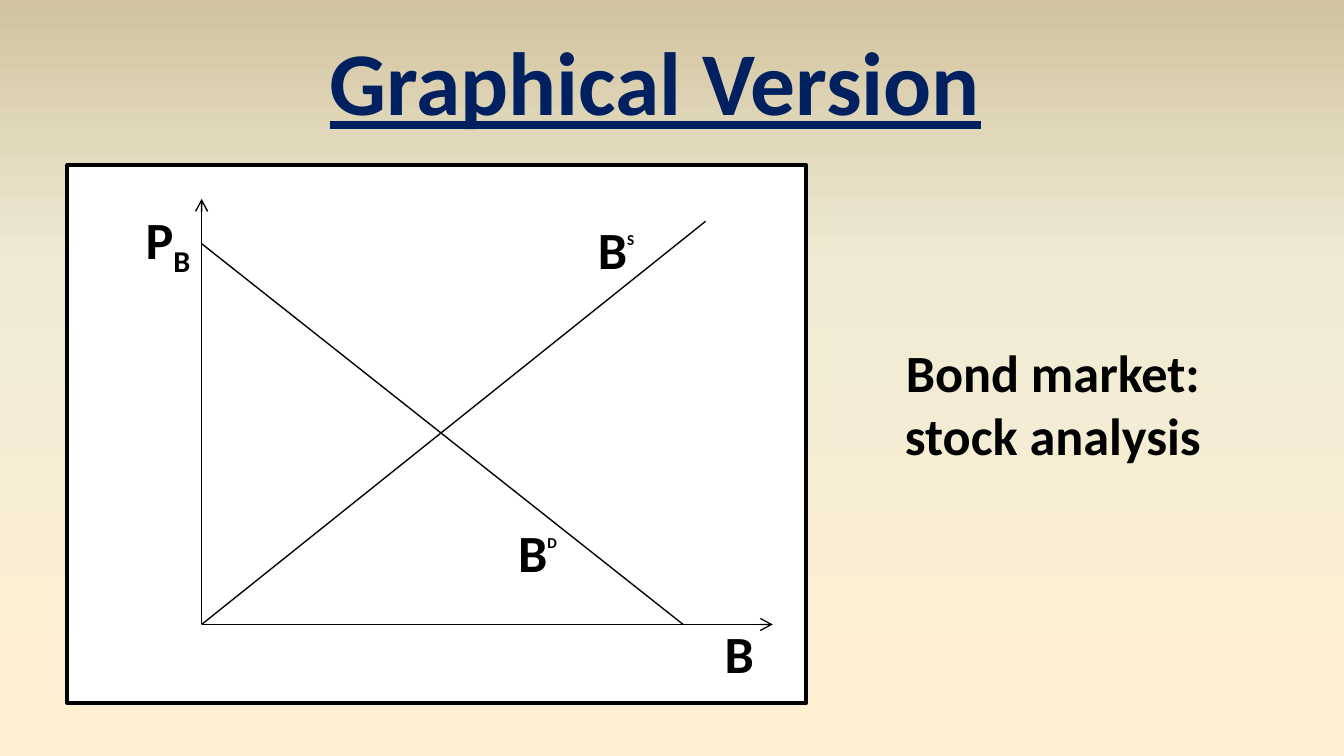
from copy import deepcopy
from dataclasses import dataclass

from pptx import Presentation
from pptx.dml.color import RGBColor
from pptx.enum.shapes import MSO_CONNECTOR, MSO_SHAPE
from pptx.enum.text import MSO_AUTO_SIZE, PP_ALIGN
from pptx.oxml.ns import qn
from pptx.oxml.xmlchemy import OxmlElement
from pptx.util import Inches, Pt


@dataclass(frozen=True)
class Theme:
    font: str = "Calibri"
    title_color: str = "002060"
    ink: str = "000000"
    panel: str = "FFFFFF"
    gradient: tuple = ((0, "FFEFD1"), (0.65, "F0EBD5"), (1, "D1C39F"))
    title_size: int = 48
    body_size: int = 28
    superscript_size: int = 14
    frame_width: float = 2
    line_width: float = 0.75


THEME = Theme()
SLIDE_WIDTH = 10
SLIDE_HEIGHT = SLIDE_WIDTH * 9 / 16
CELL = 1 / 12
GRID_TOP = 1.23
SUBSCRIPT, SUPERSCRIPT = -25, 90
ORIGIN = (18, 41)


def point(column, row):
    return Inches(column * CELL), Inches(GRID_TOP + row * CELL)


def area(column, row, columns, rows):
    return *point(column, row), Inches(columns * CELL), Inches(rows * CELL)


def paint_background(page):
    fill = page.background.fill
    fill.gradient()
    fill.gradient_angle = 90
    stop_list = page.element.find(".//" + qn("a:gsLst"))
    stop_list.append(deepcopy(stop_list[-1]))
    for stop, (position, color) in zip(fill.gradient_stops, THEME.gradient):
        stop.position = position
        stop.color.rgb = RGBColor.from_string(color)


def style_span(span, size, color):
    span.font.name = THEME.font
    span.font.size = Pt(size)
    span.font.bold = True
    span.font.color.rgb = RGBColor.from_string(color)


def add_text(shapes, text, place, size=THEME.body_size, color=THEME.ink, wrap=True):
    box = shapes.add_textbox(*area(*place))
    frame = box.text_frame
    frame.text = text
    frame.word_wrap = wrap
    frame.auto_size = MSO_AUTO_SIZE.SHAPE_TO_FIT_TEXT
    for paragraph in frame.paragraphs:
        paragraph.alignment = PP_ALIGN.CENTER
        for span in paragraph.runs:
            style_span(span, size, color)
    return frame.paragraphs[0]


def add_label(shapes, text, column, row, script="", baseline=0, script_size=THEME.body_size):
    paragraph = add_text(shapes, text, (column, row, 8, 6.8))
    if script:
        span = paragraph.add_run()
        span.text = script
        style_span(span, script_size, THEME.ink)
        span.font._element.set("baseline", str(baseline * 1000))


def add_line(shapes, start, end, arrow=False):
    line = shapes.add_connector(MSO_CONNECTOR.STRAIGHT, *point(*start), *point(*end))
    line.line.color.rgb = RGBColor.from_string(THEME.ink)
    line.line.width = Pt(THEME.line_width)
    if arrow:
        head = OxmlElement("a:tailEnd")
        head.set("type", "arrow")
        line.line._get_or_add_ln().append(head)
    line._element.spPr.append(OxmlElement("a:effectLst"))


def add_panel(shapes, place):
    panel = shapes.add_shape(MSO_SHAPE.RECTANGLE, *area(*place))
    panel.shadow.inherit = False
    panel.fill.solid()
    panel.fill.fore_color.rgb = RGBColor.from_string(THEME.panel)
    panel.line.color.rgb = RGBColor.from_string(THEME.ink)
    panel.line.width = Pt(THEME.frame_width)


def add_diagram(page):
    shapes = page.shapes.add_group_shape().shapes
    add_panel(shapes, (6, 0, 66, 48))
    add_label(shapes, "P", 11, 3.15, "B", SUBSCRIPT)
    add_line(shapes, (18, 7), (61, 41))
    add_line(shapes, ORIGIN, (18, 3), arrow=True)
    add_line(shapes, ORIGIN, (69, 41), arrow=True)
    add_label(shapes, "B", 62, 40.1)
    add_label(shapes, "B", 44, 31.1, "D", SUPERSCRIPT, THEME.superscript_size)
    add_line(shapes, (63, 5), ORIGIN)
    add_label(shapes, "B", 51, 4, "S", SUPERSCRIPT, THEME.superscript_size)


def main():
    deck = Presentation()
    deck.slide_width, deck.slide_height = Inches(SLIDE_WIDTH), Inches(SLIDE_HEIGHT)
    page = deck.slides.add_slide(deck.slide_layouts[6])
    paint_background(page)
    title = add_text(page.shapes, "Graphical Version", (28, -13, 61, 11),
                     THEME.title_size, THEME.title_color, wrap=False)
    title.runs[0].font.underline = True
    add_diagram(page)
    add_text(page.shapes, "Bond market:\nstock analysis", (78, 15.05, 32, 12.5))
    deck.save("out.pptx")


if __name__ == "__main__":
    main()
